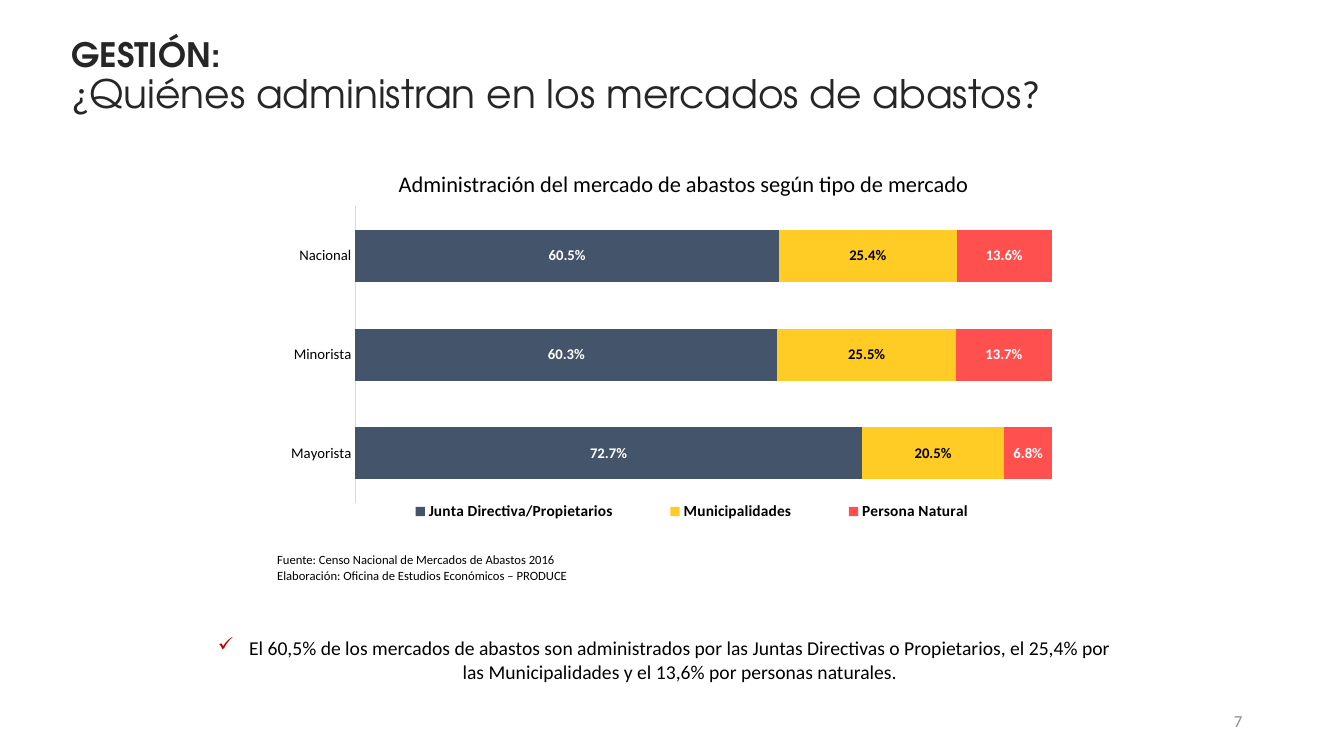
"""Build the slide on who runs the food markets."""
from lxml import etree
from pptx import Presentation
from pptx.chart.data import CategoryChartData
from pptx.dml.color import RGBColor
from pptx.enum.chart import XL_CHART_TYPE, XL_LABEL_POSITION, XL_LEGEND_POSITION, XL_TICK_MARK
from pptx.enum.text import MSO_ANCHOR, PP_ALIGN
from pptx.oxml import parse_xml
from pptx.oxml.ns import nsdecls, qn
from pptx.util import Inches, Pt

BARS = XL_CHART_TYPE.BAR_STACKED_100
CENTER, RIGHT, LEFT = PP_ALIGN.CENTER, PP_ALIGN.RIGHT, PP_ALIGN.LEFT
TOP, MIDDLE = MSO_ANCHOR.TOP, MSO_ANCHOR.MIDDLE
BOTTOM, NO_TICK = XL_LEGEND_POSITION.BOTTOM, XL_TICK_MARK.NONE
INSIDE = XL_LABEL_POSITION.CENTER

BODY, HEAD = "Calibri", "TeX Gyre Adventor"
COLORS = {
    "black": "000000", "white": "FFFFFF", "title": "262626", "page": "8C8C8C",
    "axis": "D9D9D9", "check": "C00000",
    "navy": "44546A", "gold": "FFCB25", "red": "FF5050",
}

TITLE = [
    ("GESTIÓN:\v", 24, HEAD, True),
    ("¿", 28, BODY, False),
    ("Quiénes administran en los mercados de abastos", 28, HEAD, False),
    ("?", 28, BODY, False),
]
CAPTION = "Administración del mercado de abastos según tipo de mercado"
SOURCE = ("Fuente: Censo Nacional de Mercados de Abastos 2016\n"
          "Elaboración: Oficina de Estudios Económicos – PRODUCE")
FINDING = ("El 60,5% de los mercados de abastos son administrados por las Juntas "
           "Directivas o Propietarios, el 25,4% por las Municipalidades y el 13,6% "
           "por personas naturales.")
MARKETS = ["Mayorista", "Minorista", "Nacional"]
SHARES = [
    ("Junta Directiva/Propietarios", (0.727, 0.603, 0.605), "navy", "white"),
    ("Municipalidades", (0.205, 0.255, 0.254), "gold", "black"),
    ("Persona Natural", (0.068, 0.137, 0.136), "red", "white"),
]
PLOT = {"x": 0.1, "y": 0.02, "w": 0.88, "h": 0.86}
KEYS = {"x": 0.11, "y": 0.86, "w": 0.83, "h": 0.09}


def color(name):
    return RGBColor.from_string(COLORS[name])


def style(font, size, tint, face=BODY, bold=False):
    font.size, font.name, font.bold = Pt(size), face, bold
    font.color.rgb = color(tint)


def add_text(slide, box, text, size, tint, align=LEFT, anchor=TOP):
    frame = slide.shapes.add_textbox(*map(Inches, box)).text_frame
    frame.word_wrap = True
    frame.vertical_anchor = anchor
    frame.text = text
    for para in frame.paragraphs:
        para.alignment = align
        for run in para.runs:
            style(run.font, size, tint)
    return frame.paragraphs[0]


def add_title(slide):
    para = add_text(slide, (0.61, 0.25, 11.96, 1.05), "", 28, "title", anchor=MIDDLE)
    para.line_spacing = 0.9
    for text, size, face, bold in TITLE:
        run = para.add_run()
        run.text = text.rstrip("\v")
        style(run.font, size, "title", face, bold)
        if text.endswith("\v"):
            para.add_line_break()


def add_check(para):
    props = para._p.get_or_add_pPr()
    props.set("marL", str(Inches(0.31)))
    props.set("indent", str(Inches(-0.31)))
    tint = etree.SubElement(props, qn("a:buClr"))
    etree.SubElement(tint, qn("a:srgbClr"), val=COLORS["check"])
    etree.SubElement(props, qn("a:buFont"), typeface="Wingdings")
    etree.SubElement(props, qn("a:buChar"), char="ü")


def layout(area, inner=False):
    target = '<c:layoutTarget val="inner"/>' if inner else ""
    modes = "".join(f'<c:{side}Mode val="edge"/>' for side in "xy")
    sizes = "".join(f'<c:{key} val="{val}"/>' for key, val in area.items())
    return parse_xml(f'<c:layout {nsdecls("c")}><c:manualLayout>{target}{modes}{sizes}'
                     "</c:manualLayout></c:layout>")


def add_bars(slide):
    data = CategoryChartData(number_format="0.0%")
    data.categories = MARKETS
    for name, values, _, _ in SHARES:
        data.add_series(name, values)
    box = map(Inches, (2.74, 1.98, 7.85, 3.42))
    chart = slide.shapes.add_chart(BARS, *box, data).chart
    style(chart.font, 10, "black")
    chart.has_title = False

    plot = chart.plots[0]
    plot.gap_width, plot.overlap = 90, 100
    plot.vary_by_categories = False
    for series, (_, _, fill, ink) in zip(plot.series, SHARES):
        series.format.fill.solid()
        series.format.fill.fore_color.rgb = color(fill)
        labels = series.data_labels
        labels.show_value = True
        labels.number_format, labels.number_format_is_linked = "0.0%", False
        labels.position = INSIDE
        style(labels.font, 10.5, ink, bold=True)

    axis = chart.category_axis
    axis.major_tick_mark = axis.minor_tick_mark = NO_TICK
    style(axis.tick_labels.font, 10.5, "black")
    axis.format.line.color.rgb = color("axis")
    axis.format.line.width = Pt(0.75)
    chart.value_axis.visible = False
    chart.value_axis.has_major_gridlines = False

    chart.has_legend = True
    legend = chart.legend
    legend.position, legend.include_in_layout = BOTTOM, False
    style(legend.font, 11, "black", bold=True)
    area = chart._chartSpace.find(".//" + qn("c:plotArea"))
    for old in area.findall(qn("c:layout")):
        area.remove(old)
    area.insert(0, layout(PLOT, inner=True))
    keys = legend._element
    for old in keys.findall(qn("c:layout")):
        keys.remove(old)
    keys.find(qn("c:legendPos")).addnext(layout(KEYS))


def main():
    deck = Presentation()
    deck.slide_width, deck.slide_height = Inches(13.33), Inches(7.5)
    slide = deck.slides.add_slide(deck.slide_layouts[6])
    add_text(slide, (2.65, 5.43, 6.21, 0.4), SOURCE, 9, "black")
    add_check(add_text(slide, (2.04, 6.26, 9.1, 0.57), FINDING, 14, "black", CENTER))
    add_text(slide, (2.74, 1.64, 8.08, 0.37), CAPTION, 16, "black", CENTER)
    add_bars(slide)
    add_title(slide)
    add_text(slide, (9.42, 6.95, 3, 0.4), "7", 12, "page", RIGHT, MIDDLE)
    deck.save("out.pptx")


if __name__ == "__main__":
    main()
